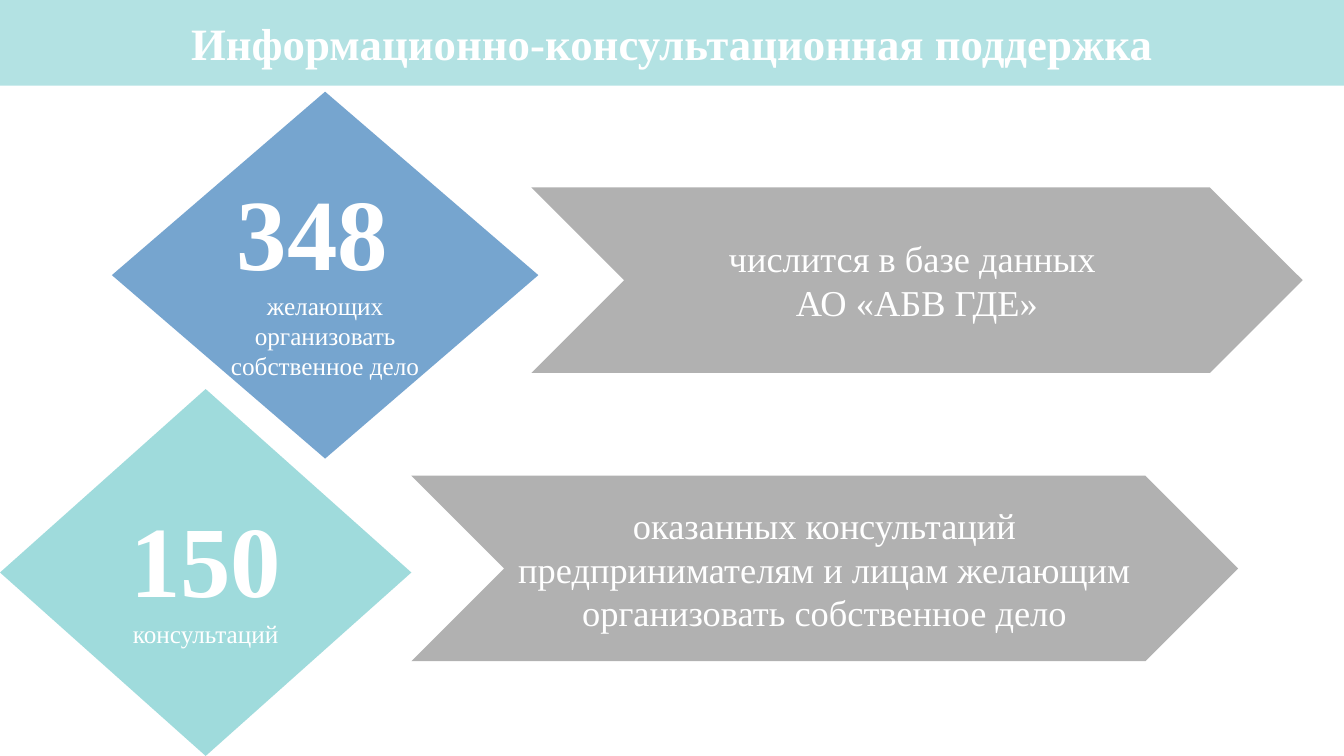
from pptx import Presentation
from pptx.dml.color import RGBColor
from pptx.enum import shapes, text
from pptx.oxml.ns import qn
from pptx import util as u
from lxml import etree

FONT = "Times New Roman"
WHITE, GRAY, BLUE, TEAL = "FFFFFF", "808080", "2E75B6", "68C6C8"
WIDTH, HEIGHT = 13.33, 7.5
DIAMOND_HEIGHT, CHEVRON_HEIGHT = 3.64, 1.84


def color(hex_string):
    return RGBColor.from_string(hex_string)


def paint(shape, hex_string, opacity):
    """Fill the shape with a colour at the given opacity in percent, without outline."""
    shape.fill.solid()
    shape.fill.fore_color.rgb = color(hex_string)
    rgb = shape.fill._xPr.find(f".//{qn('a:srgbClr')}")
    etree.SubElement(rgb, qn("a:alpha"), val=str(opacity * 1000))
    shape.line.fill.background()


def write(shape, lines):
    """Write centred white paragraphs from (wording, size, bold) tuples."""
    frame = shape.text_frame
    frame.word_wrap = True
    frame.auto_size = text.MSO_AUTO_SIZE.NONE
    frame.vertical_anchor = text.MSO_ANCHOR.MIDDLE
    for index, (wording, size, bold) in enumerate(lines):
        paragraph = frame.add_paragraph() if index else frame.paragraphs[0]
        paragraph.text = wording
        paragraph.alignment = text.PP_ALIGN.CENTER
        font = paragraph.font
        font.name, font.size, font.bold = FONT, u.Pt(size), bold
        font.color.rgb = color(WHITE)


def add_block(slide, kind, box, fill, opacity, lines):
    shape = slide.shapes.add_shape(kind, *map(u.Inches, box))
    shape.shadow.inherit = False
    paint(shape, fill, opacity)
    write(shape, lines)


def add_chevron(slide, left, top, width, lines):
    add_block(slide, shapes.MSO_SHAPE.CHEVRON, (left, top, width, CHEVRON_HEIGHT),
              GRAY, 61, [(line, 26, False) for line in lines])


def add_diamond(slide, left, top, width, fill, opacity, number, caption):
    add_block(slide, shapes.MSO_SHAPE.DIAMOND, (left, top, width, DIAMOND_HEIGHT),
              fill, opacity, [(number, 72, True), (caption, 18, False)])


def add_title(slide, wording):
    title = slide.shapes.title
    title.left = title.top = 0
    title.width, title.height = u.Inches(WIDTH), u.Inches(0.85)
    paint(title, TEAL, 50)
    write(title, [(wording, 32, True)])


def main():
    presentation = Presentation()
    presentation.slide_width = u.Inches(WIDTH)
    presentation.slide_height = u.Inches(HEIGHT)
    slide = presentation.slides.add_slide(presentation.slide_layouts[5])

    add_title(slide, "Информационно-консультационная поддержка")
    add_chevron(slide, 5.27, 1.86, 7.65, ["числится в базе данных ", "АО «АБВ ГДЕ»"])
    add_diamond(slide, 1.11, 0.91, 4.23, BLUE, 65,
                "348 ", "желающих организовать собственное дело")
    add_chevron(slide, 4.08, 4.72, 8.2, [
        "оказанных консультаций предпринимателям и лицам желающим "
        "организовать собственное дело"])
    add_diamond(slide, 0, HEIGHT - DIAMOND_HEIGHT, 4.08, TEAL, 63, "150", "консультаций")

    presentation.save("out.pptx")


if __name__ == "__main__":
    main()
